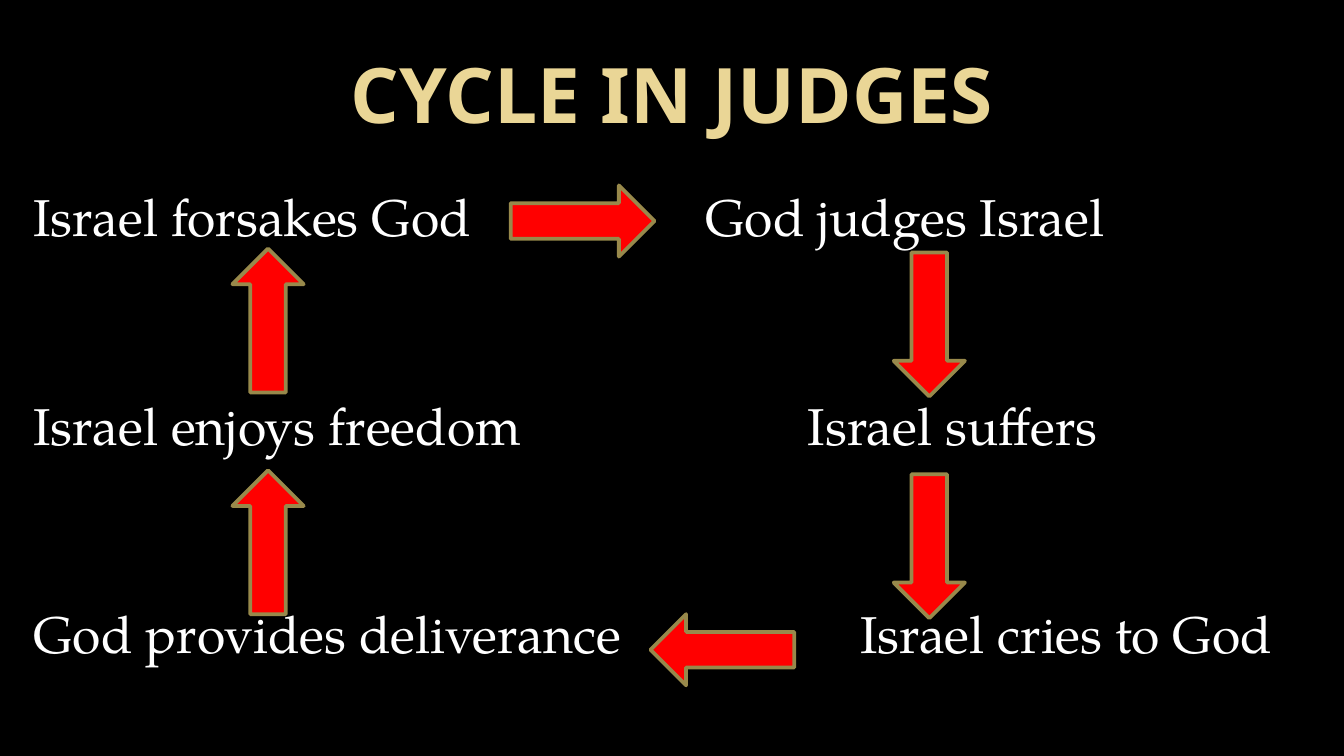
from pptx import Presentation
from pptx import util as u
from pptx.dml import color
from pptx.enum import shapes, text

WIDTH = 10
HEIGHT = WIDTH * 9 / 16
ROW_TOP, ROW_PITCH, ROW_HEIGHT = 1.33, 1.55, 0.56
ARROW_LENGTH, ARROW_BREADTH = 1.07, 0.53
LEFT_ARROWS, RIGHT_ARROWS = 1.73, 6.65
KIND = shapes.MSO_SHAPE

LABELS = [
    ("Israel forsakes God", 0.25, 0),
    ("God judges Israel", 5.25, 0),
    ("Israel enjoys freedom", 0.25, 1),
    ("Israel suffers", 6.01, 1),
    ("God provides deliverance", 0.25, 2),
    ("Israel cries to God", 6.4, 2),
]
ARROWS = [
    (KIND.RIGHT_ARROW, 3.8, 1.38),
    (KIND.DOWN_ARROW, RIGHT_ARROWS, 1.88),
    (KIND.DOWN_ARROW, RIGHT_ARROWS, 3.53),
    (KIND.LEFT_ARROW, 4.84, 4.57),
    (KIND.UP_ARROW, LEFT_ARROWS, 3.5),
    (KIND.UP_ARROW, LEFT_ARROWS, 1.85),
]


def paint(target, hex_color):
    """Give a fill one solid colour."""
    target.solid()
    target.fore_color.rgb = color.RGBColor.from_string(hex_color)


def add_text(slide, words, left, top, width, height, *, font, size,
             ink="FFFFFF", bold=False, align=text.PP_ALIGN.LEFT):
    """Add one line of text, centred vertically in its box."""
    box = slide.shapes.add_textbox(*map(u.Inches, (left, top, width, height)))
    frame = box.text_frame
    frame.word_wrap = True
    frame.vertical_anchor = text.MSO_ANCHOR.MIDDLE
    frame.margin_left = frame.margin_right = 0
    frame.margin_top = frame.margin_bottom = 0
    para = frame.paragraphs[0]
    para.alignment = align
    span = para.add_run()
    span.text = words
    span.font.name, span.font.size, span.font.bold = font, u.Pt(size), bold
    paint(span.font.fill, ink)


def add_label(slide, words, left, row):
    """Add one stage of the cycle on its row."""
    add_text(slide, words, left, ROW_TOP + row * ROW_PITCH,
             min(4.6, WIDTH - left), ROW_HEIGHT,
             font="TeX Gyre Pagella", size=27.7)


def add_arrow(slide, kind, left, top):
    """Add a block arrow, lying or standing as its kind asks."""
    size = (ARROW_LENGTH, ARROW_BREADTH)
    if kind in (KIND.UP_ARROW, KIND.DOWN_ARROW):
        size = size[::-1]
    arrow = slide.shapes.add_shape(kind, *map(u.Inches, (left, top, *size)))
    arrow.shadow.inherit = False
    paint(arrow.fill, "FF0000")
    paint(arrow.line.fill, "98894B")
    arrow.line.width = u.Pt(2)


def main():
    """Build and save the slide."""
    deck = Presentation()
    deck.slide_width, deck.slide_height = u.Inches(WIDTH), u.Inches(HEIGHT)
    page = deck.slides.add_slide(deck.slide_layouts[6])
    paint(page.background.fill, "000000")
    add_text(page, "CYCLE IN JUDGES", 0.5, 0.22, 0.9 * WIDTH, 0.94,
             font="Noto Sans", size=41, ink="EAD696", bold=True,
             align=text.PP_ALIGN.CENTER)
    for label in LABELS:
        add_label(page, *label)
    for arrow in ARROWS:
        add_arrow(page, *arrow)
    deck.save("out.pptx")


if __name__ == "__main__":
    main()
